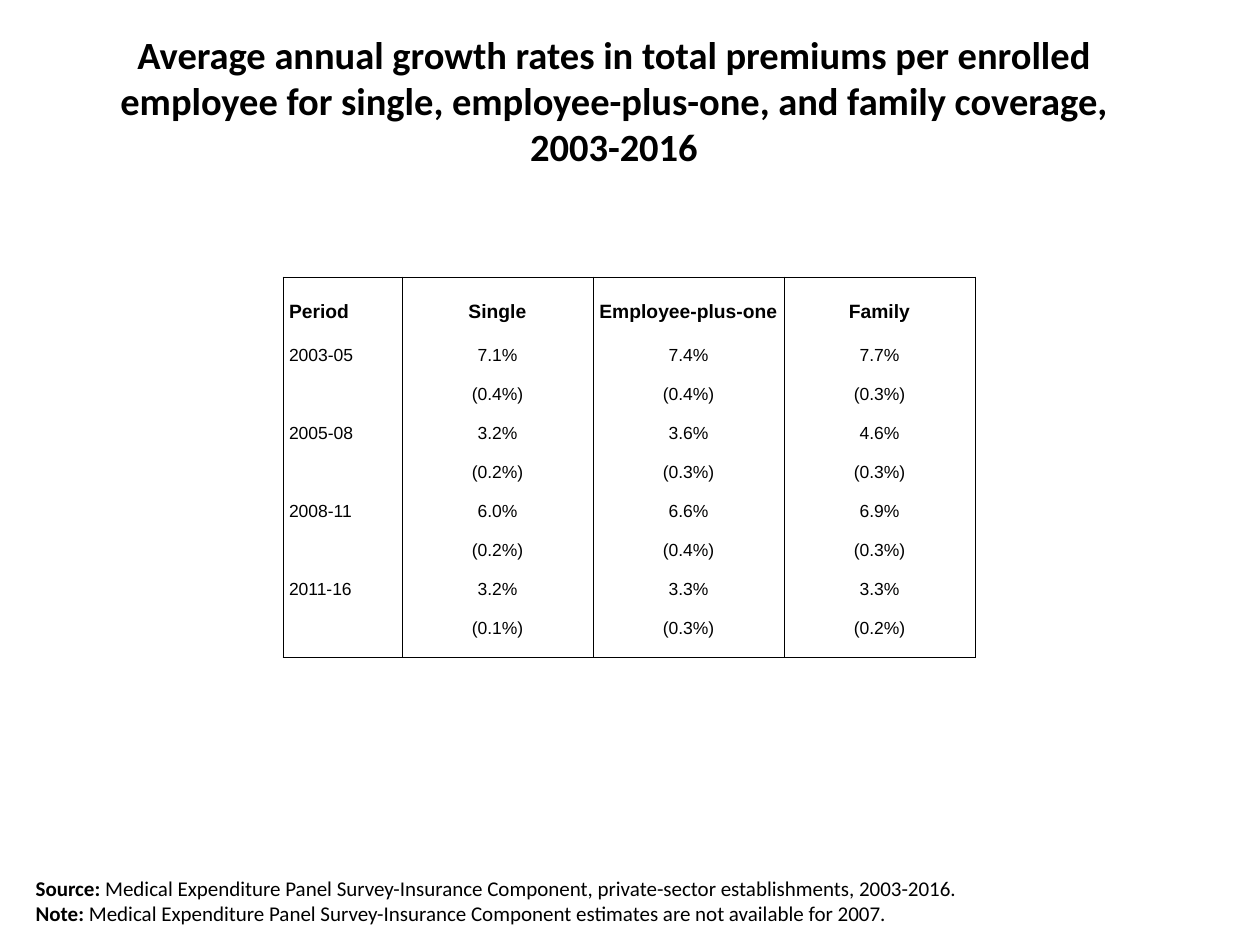
from dataclasses import dataclass

from lxml.etree import SubElement
from pptx import Presentation
from pptx.dml.color import RGBColor
from pptx.enum.text import MSO_ANCHOR as Anchor
from pptx.enum.text import MSO_AUTO_SIZE as AutoSize
from pptx.enum.text import PP_ALIGN as Align
from pptx.oxml.ns import qn
from pptx.util import Emu, Pt

PX = 914400 / 126
COLORS = {"text": "000000", "border": "000000"}


@dataclass(frozen=True)
class Box:
    left: int
    top: int
    width: int
    height: int


@dataclass(frozen=True)
class Growth:
    """Growth rates of one period, with their standard errors."""
    period: str
    rates: tuple[str, ...]
    errors: tuple[str, ...]


TITLE = ("Average annual growth rates in total premiums per enrolled employee "
         "for single, employee-plus-one, and family coverage, 2003-2016")
HEADER = ("Period", "Single", "Employee-plus-one", "Family")
GROWTH = (
    Growth("2003-05", ("7.1%", "7.4%", "7.7%"), ("(0.4%)", "(0.4%)", "(0.3%)")),
    Growth("2005-08", ("3.2%", "3.6%", "4.6%"), ("(0.2%)", "(0.3%)", "(0.3%)")),
    Growth("2008-11", ("6.0%", "6.6%", "6.9%"), ("(0.2%)", "(0.4%)", "(0.3%)")),
    Growth("2011-16", ("3.2%", "3.3%", "3.3%"), ("(0.1%)", "(0.3%)", "(0.2%)")),
)
NOTES = (
    ("Source: ", "Medical Expenditure Panel Survey-Insurance Component, "
                 "private-sector establishments, 2003-2016."),
    ("Note: ", "Medical Expenditure Panel Survey-Insurance Component "
               "estimates are not available for 2007."),
)

TITLE_BOX = Box(63, 21, 1102, 158)
TABLE_BOX = Box(283, 277, 692, 381)
NOTES_BOX = Box(23, 869, 955, 74)
COLUMN_WIDTHS = (119, 191, 191, 191)
HEADER_HEIGHT, ROW_HEIGHT = 69, 39
CELL_INDENT = 6


def px(length: int) -> Emu:
    return Emu(round(length * PX))


def write_text(paragraph, text: str, *, size: int, font: str = "Calibri",
               bold: bool = False, align=Align.LEFT, indent: int = 0) -> None:
    """Add a run to the paragraph and set the paragraph's layout."""
    paragraph.alignment = align
    paragraph.space_before = Pt(0)
    properties = paragraph._p.get_or_add_pPr()
    properties.set("marL", str(px(indent)))
    properties.set("indent", "0")
    if properties.find(qn("a:buNone")) is None:
        SubElement(properties, qn("a:buNone"))
    run = paragraph.add_run()
    run.text = text
    run.font.name = font
    run.font.size = Pt(size)
    run.font.bold = bold
    run.font.color.rgb = RGBColor.from_string(COLORS["text"])


def place(shape, box: Box, anchor) -> None:
    shape.left, shape.top = px(box.left), px(box.top)
    shape.width, shape.height = px(box.width), px(box.height)
    frame = shape.text_frame
    frame.word_wrap = True
    frame.auto_size = AutoSize.NONE
    frame.vertical_anchor = anchor


def set_borders(cell, sides: str) -> None:
    """Draw the named sides (letters of LRTB) and hide the others."""
    properties = cell._tc.get_or_add_tcPr()
    for side in "LRTB":
        line = SubElement(properties, qn(f"a:ln{side}"), w=str(Pt(0.5)))
        if side in sides:
            fill = SubElement(line, qn("a:solidFill"))
            SubElement(fill, qn("a:srgbClr"), val=COLORS["border"])
        else:
            SubElement(line, qn("a:noFill"))


def add_growth_table(slide, box: Box) -> None:
    rows = [HEADER]
    for growth in GROWTH:
        rows += [(growth.period, *growth.rates), ("", *growth.errors)]
    table = slide.shapes.add_table(
        len(rows), len(HEADER), px(box.left), px(box.top),
        px(box.width), px(box.height)).table
    table.first_row = table.horz_banding = False
    for column, width in zip(table.columns, COLUMN_WIDTHS):
        column.width = px(width)

    for i, values in enumerate(rows):
        is_header = i == 0
        table.rows[i].height = px(HEADER_HEIGHT if is_header else ROW_HEIGHT)
        sides = "LR" + "T" * is_header + "B" * (i == len(rows) - 1)
        for j, value in enumerate(values):
            cell = table.cell(i, j)
            cell.margin_left = cell.margin_right = 0
            cell.margin_top = cell.margin_bottom = 0
            cell.vertical_anchor = Anchor.MIDDLE if is_header else Anchor.TOP
            set_borders(cell, sides)
            cell.fill.background()
            write_text(cell.text_frame.paragraphs[0], value, font="Arial",
                       size=11 if is_header else 10, bold=is_header,
                       align=Align.CENTER if j else Align.LEFT,
                       indent=0 if j else CELL_INDENT)


def add_notes(body) -> None:
    place(body, NOTES_BOX, Anchor.TOP)
    frame = body.text_frame
    for i, (label, note) in enumerate(NOTES):
        paragraph = frame.add_paragraph() if i else frame.paragraphs[0]
        write_text(paragraph, label, size=12, bold=True)
        write_text(paragraph, note, size=12)


def main() -> None:
    presentation = Presentation()
    presentation.slide_width, presentation.slide_height = px(1260), px(945)
    slide = presentation.slides.add_slide(presentation.slide_layouts[1])

    title = slide.shapes.title
    place(title, TITLE_BOX, Anchor.MIDDLE)
    write_text(title.text_frame.paragraphs[0], TITLE, size=22, bold=True,
               align=Align.CENTER)
    add_growth_table(slide, TABLE_BOX)
    add_notes(slide.placeholders[1])

    presentation.save("out.pptx")


if __name__ == "__main__":
    main()
